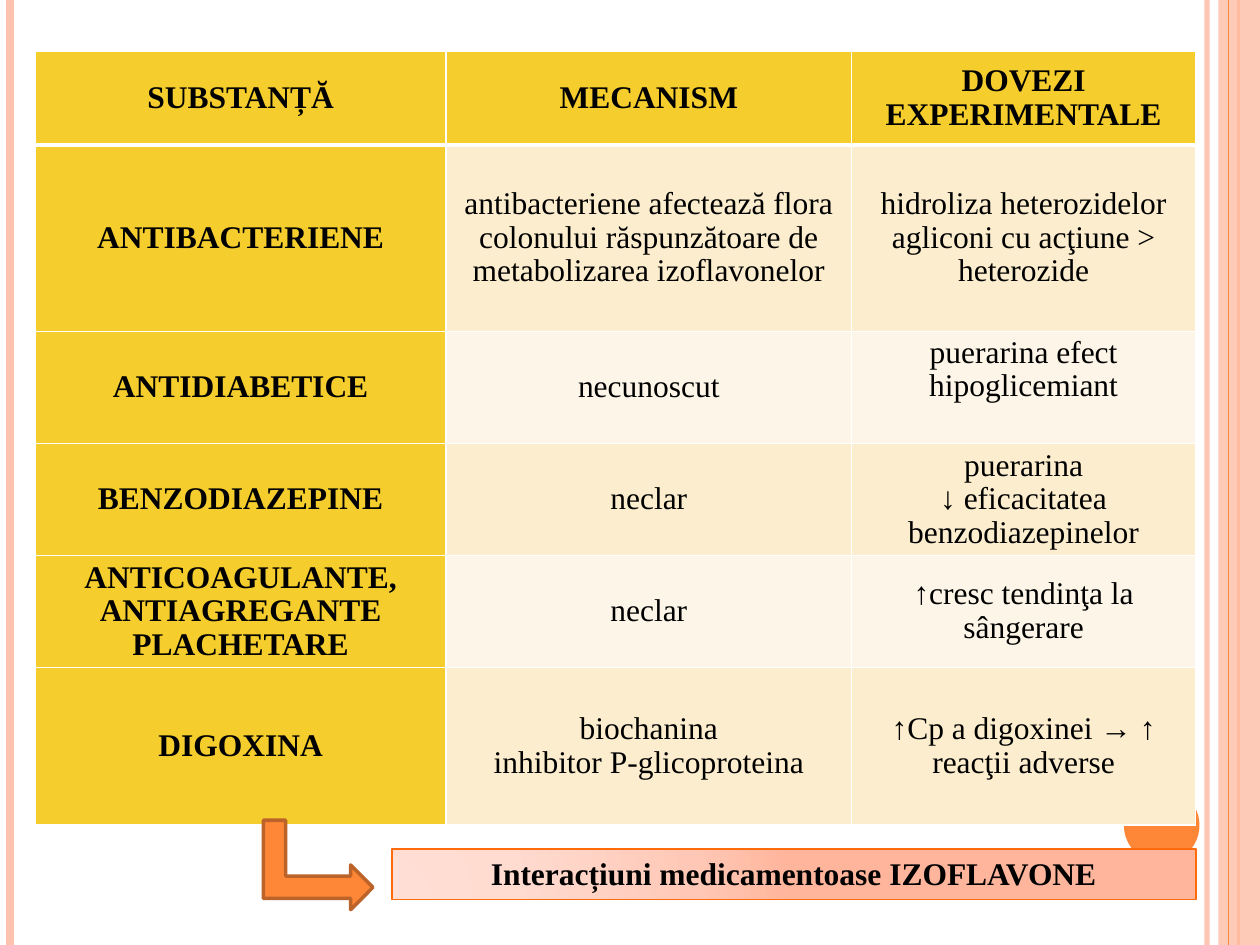
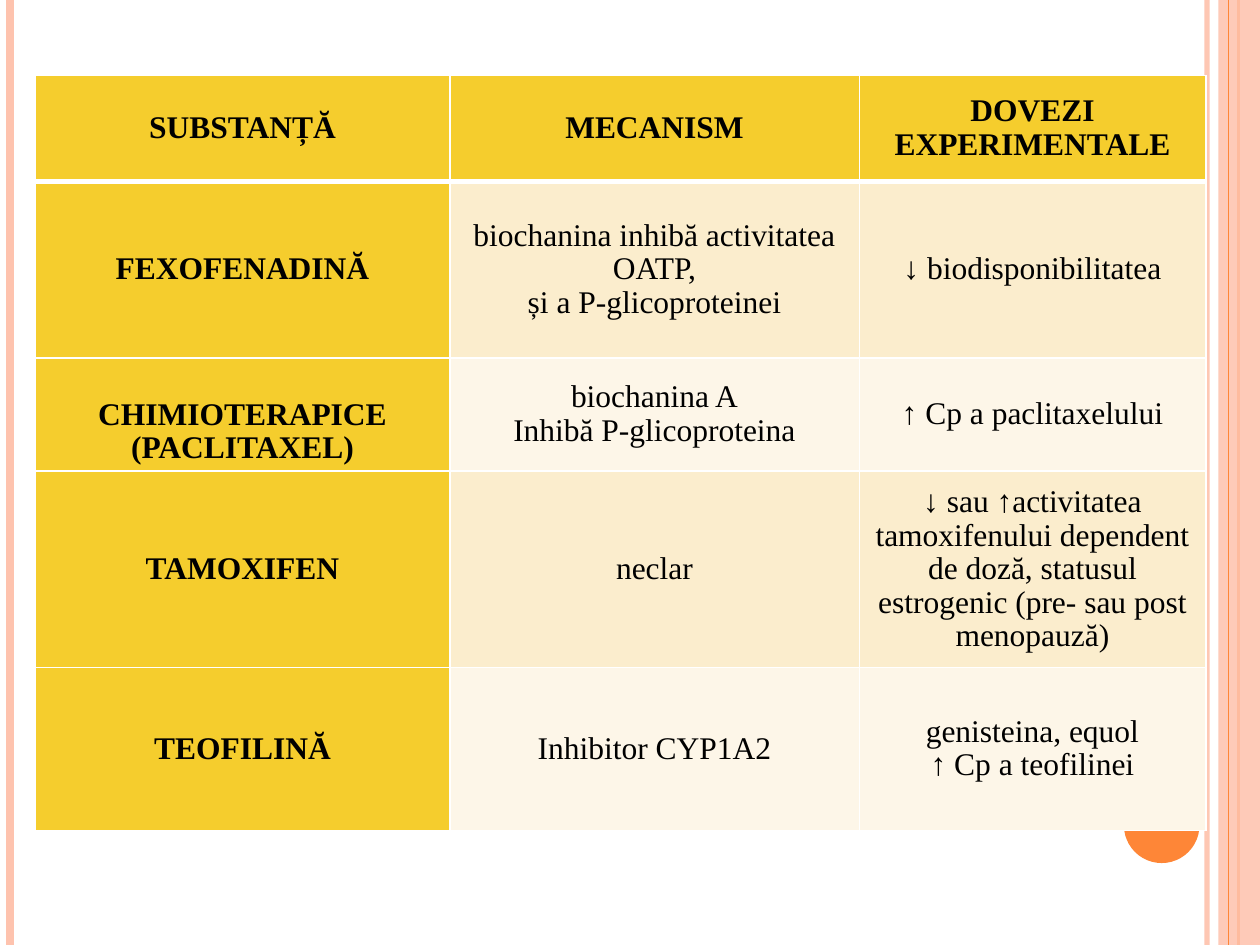
from dataclasses import dataclass

from lxml import etree
from pptx import Presentation
from pptx.dml.color import RGBColor
from pptx.enum.shapes import MSO_CONNECTOR, MSO_SHAPE
from pptx.enum.text import MSO_ANCHOR, PP_ALIGN
from pptx.oxml.ns import qn
from pptx.util import Inches, Pt

STRAIGHT = MSO_CONNECTOR.STRAIGHT
RECT, OVAL, ARROW = MSO_SHAPE.RECTANGLE, MSO_SHAPE.OVAL, MSO_SHAPE.BENT_UP_ARROW
MIDDLE, CENTER = MSO_ANCHOR.MIDDLE, PP_ALIGN.CENTER


@dataclass(frozen=True)
class Theme:
    font: str = "Times New Roman"
    size: int = 18
    pitch: float = 0.96
    ink: str = "000000"
    white: str = "FFFFFF"
    peach: str = "FEC3AE"
    orange: str = "FE8637"
    rust: str = "BC6329"
    frame: str = "FF6B0A"
    gold: str = "F5CD2D"
    bands: tuple = ("FBEDCD", "FDF6E8")
    glow: tuple = ((0, "FFDED5"), (30, "FFDBD0"), (75, "FFC8B6"), (100, "FFB59B"))


THEME = Theme()
WIDE, HIGH = 10, 7.5
LINE = 0.28  # height of one line of table text

HEAD = ("SUBSTANȚĂ", "MECANISM", "DOVEZI EXPERIMENTALE")
FIRST = [
    HEAD,
    ("ANTIBACTERIENE",
     "antibacteriene afectează flora colonului răspunzătoare de metabolizarea izoflavonelor",
     "hidroliza heterozidelor\nagliconi cu acţiune > heterozide"),
    ("ANTIDIABETICE", "necunoscut", "puerarina efect hipoglicemiant"),
    ("BENZODIAZEPINE", "neclar", "puerarina\n↓ eficacitatea benzodiazepinelor"),
    ("ANTICOAGULANTE, ANTIAGREGANTE PLACHETARE", "neclar",
     "↑cresc tendinţa la sângerare"),
    ("DIGOXINA", "biochanina\ninhibitor P-glicoproteina",
     "↑Cp a digoxinei → ↑ reacţii adverse"),
]
SECOND = [
    HEAD,
    ("FEXOFENADINĂ",
     "biochanina inhibă activitatea OATP,\nși a P-glicoproteinei",
     "↓ biodisponibilitatea"),
    ("CHIMIOTERAPICE\n(PACLITAXEL)", "biochanina A\nInhibă P-glicoproteina",
     "↑ Cp a paclitaxelului"),
    ("TAMOXIFEN", "neclar",
     "↓ sau ↑activitatea tamoxifenului dependent de doză, "
     "statusul estrogenic (pre- sau post menopauză)"),
    ("TEOFILINĂ", "Inhibitor CYP1A2", "genisteina, equol\n↑ Cp a teofilinei"),
]


def rgb(code):
    return RGBColor.from_string(code)


def sub(node, tag, **attrs):
    child = etree.SubElement(node, qn(tag))
    for key, val in attrs.items():
        child.set(key, str(val))
    return child


def fade(shape, share):
    """Set the opacity, in percent, of the first colour of a shape."""
    color = next(shape.element.iter(qn("a:srgbClr")))
    sub(color, "a:alpha", val=share * 1000)


def style(frame, bold):
    for para in frame.paragraphs:
        para.alignment = CENTER
        para.line_spacing = THEME.pitch
        for run in para.runs:
            font = run.font
            font.name, font.size, font.bold = THEME.font, Pt(THEME.size), bold
            font.color.rgb = rgb(THEME.ink)


def add_form(slide, kind, box, fill, line=None, width=1):
    form = slide.shapes.add_shape(kind, *map(Inches, box))
    form.shadow.inherit = False
    form.fill.solid()
    form.fill.fore_color.rgb = rgb(fill)
    if line:
        form.line.color.rgb = rgb(line)
        form.line.width = Pt(width)
    else:
        form.line.fill.background()
    return form


def add_rule(slide, x, color, width):
    rule = slide.shapes.add_connector(
        STRAIGHT, Inches(x), 0, Inches(x), Inches(HIGH))
    rule.line.color.rgb = rgb(color)
    rule.line.width = Pt(width)
    sub(rule.element.spPr, "a:effectLst")
    return rule


def add_decor(slide, layout):
    """Draw the side bands and dot, then hand them to the shared layout."""
    for mark in list(layout.placeholders):
        layout.shapes.element.remove(mark.element)
    inner = add_rule(slide, 9.58, THEME.peach, 3)
    fade(inner, 93)
    add_rule(slide, 0.08, THEME.peach, 4.5)
    add_rule(slide, 9.83, THEME.orange, 1.5)
    band = add_form(slide, RECT, (9.67, 0, WIDE - 9.67, HIGH), THEME.peach)
    fade(band, 87)
    add_rule(slide, 9.75, THEME.orange, 0.75)
    add_form(slide, OVAL, (8.92, 6.25, 0.6, 0.6), THEME.orange)
    for part in list(slide.shapes):
        layout.shapes.element.append(part.element)


def edge(cell, row):
    """White cell borders, with a thick one below the header."""
    thick = {"a:lnB": row == 0, "a:lnT": row == 1}
    props = cell._tc.get_or_add_tcPr()
    for tag in ("a:lnL", "a:lnR", "a:lnT", "a:lnB"):
        line = sub(props, tag, w=Pt(3 if thick.get(tag) else 1))
        sub(sub(line, "a:solidFill"), "a:srgbClr", val=THEME.white)


def add_grid(slide, left, top, cols, rows, data):
    grid = slide.shapes.add_table(
        len(rows), len(cols), Inches(left), Inches(top),
        Inches(sum(cols)), Inches(sum(rows))).table
    grid.horz_banding = False
    for col, width in zip(grid.columns, cols):
        col.width = Inches(width)
    for r, (height, texts) in enumerate(zip(rows, data)):
        grid.rows[r].height = Inches(height)
        for c, text in enumerate(texts):
            cell = grid.cell(r, c)
            lead = r == 0 or c == 0
            cell.text_frame.text = text
            style(cell.text_frame, lead)
            cell.vertical_anchor = MIDDLE
            cell.margin_left = cell.margin_right = Inches(0.03)
            cell.margin_top = cell.margin_bottom = 0
            edge(cell, r)
            cell.fill.solid()
            cell.fill.fore_color.rgb = rgb(
                THEME.gold if lead else THEME.bands[(r - 1) % 2])
    return grid


def add_label(slide, box, text):
    """Framed caption with a radial glow."""
    label = add_form(slide, RECT, box, THEME.peach, THEME.frame)
    props = label.element.spPr
    glow = etree.Element(qn("a:gradFill"))
    stops = sub(glow, "a:gsLst")
    for place, color in THEME.glow:
        sub(sub(stops, "a:gs", pos=place * 1000), "a:srgbClr", val=color)
    way = sub(glow, "a:path", path="circle")
    sub(way, "a:fillToRect", l=5000, t=100000, r=120000, b=10000)
    props.replace(props.find(qn("a:solidFill")), glow)
    frame = label.text_frame
    frame.text = text
    frame.word_wrap = True
    frame.vertical_anchor = MIDDLE
    style(frame, True)


def add_arrow(slide, box):
    arrow = add_form(slide, ARROW, box, THEME.orange, THEME.rust, 2)
    arrow.rotation = 90


def main():
    deck = Presentation()
    deck.slide_width, deck.slide_height = Inches(WIDE), Inches(HIGH)
    layout = deck.slide_layouts[6]
    one, two = (deck.slides.add_slide(layout) for _ in range(2))
    add_decor(one, layout)

    # First table with its caption
    grid = add_grid(one, 0.28, 0.41, (3.26, 3.22, 2.73),
                    (0.74, 1.48, 0.89, 0.89, 0.89, 1.25), FIRST)
    grid.cell(2, 2).margin_bottom = Inches(LINE)
    add_arrow(one, (2.17, 6.43, 0.71, 0.87))
    add_label(one, (3.11, 6.74, 6.38, 0.4),
              "Interacțiuni medicamentoase IZOFLAVONE")

    # Second table
    grid = add_grid(two, 0.28, 0.6, (3.29, 3.25, 2.75),
                    (0.84, 1.4, 0.9, 1.56, 1.29), SECOND)
    grid.cell(2, 0).margin_top = Inches(LINE)

    deck.save("out.pptx")


if __name__ == "__main__":
    main()
